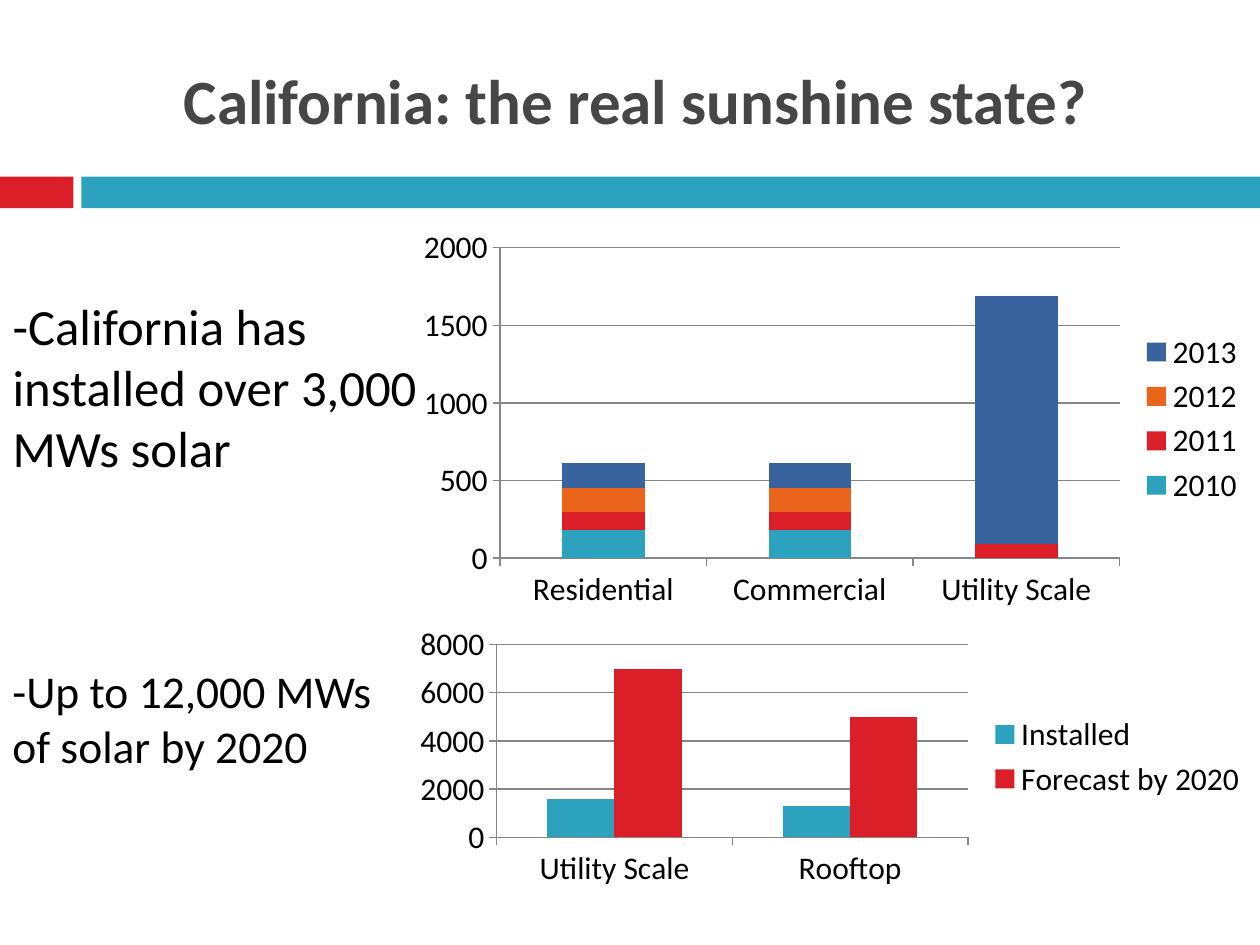
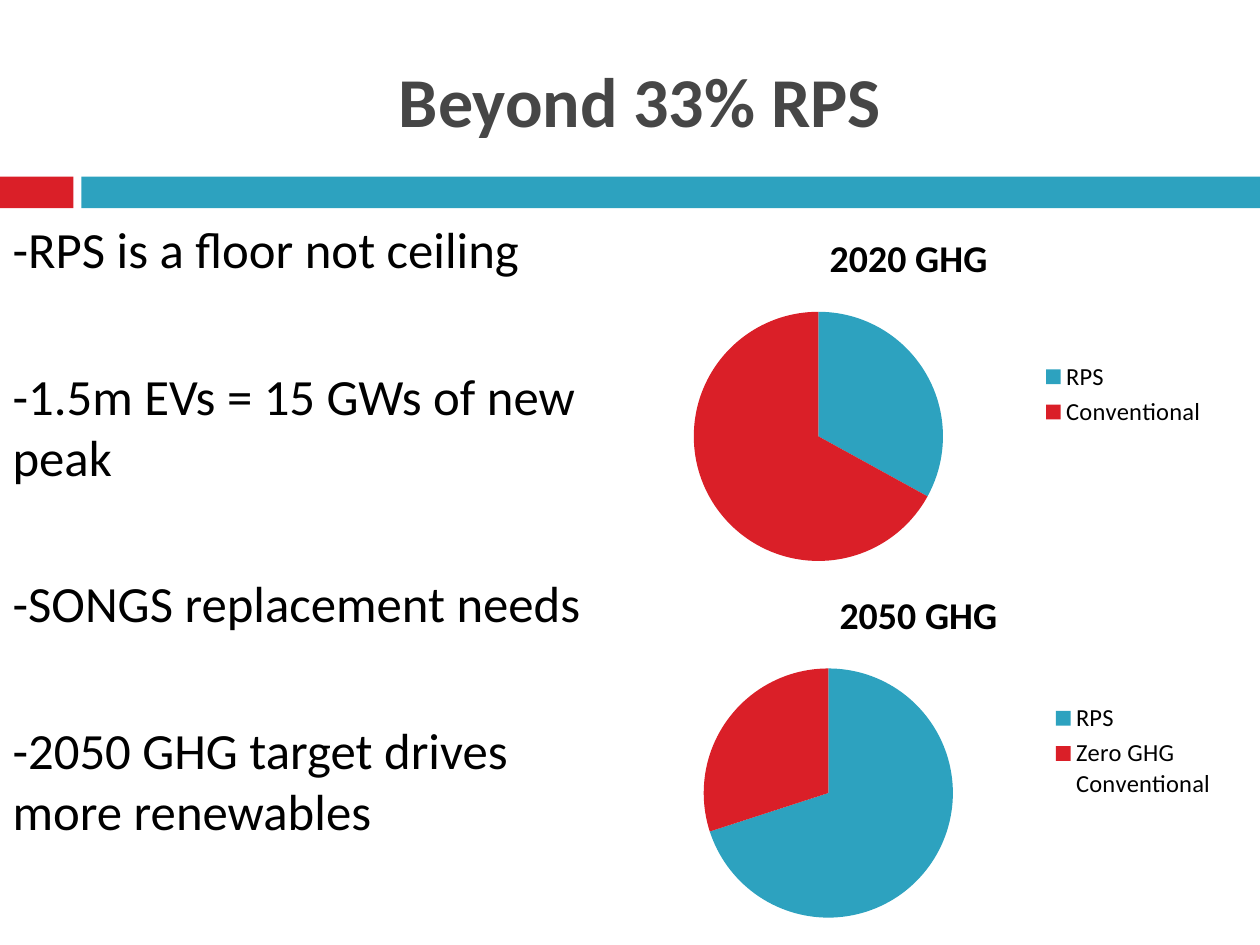
from lxml import etree
from pptx import Presentation
from pptx.chart.data import CategoryChartData
from pptx.dml.color import RGBColor
from pptx.enum.chart import XL_CHART_TYPE, XL_LEGEND_POSITION, XL_TICK_MARK
from pptx.enum.shapes import MSO_SHAPE
from pptx.enum.text import MSO_ANCHOR, MSO_AUTO_SIZE, PP_ALIGN
from pptx.oxml.ns import qn
from pptx.util import Cm, Pt

STACKED = XL_CHART_TYPE.COLUMN_STACKED
CLUSTERED = XL_CHART_TYPE.COLUMN_CLUSTERED
PIE = XL_CHART_TYPE.PIE
LEGEND_RIGHT = XL_LEGEND_POSITION.RIGHT
TICK_OUTSIDE = XL_TICK_MARK.OUTSIDE
RECTANGLE = MSO_SHAPE.RECTANGLE
NO_AUTOFIT = MSO_AUTO_SIZE.NONE
TOP, MIDDLE = MSO_ANCHOR.TOP, MSO_ANCHOR.MIDDLE
CENTER, LEFT = PP_ALIGN.CENTER, PP_ALIGN.LEFT

FONT = "Calibri"
TEAL, RED, ORANGE, NAVY = "2DA2BF", "DA1F28", "EB641B", "39639D"
SERIES_COLORS = [TEAL, RED, ORANGE, NAVY]
TITLE_GRAY, AXIS_GRAY, BLACK = "464646", "878787", "000000"

SLIDE_WIDTH, SLIDE_HEIGHT = 25.4, 19.05
BAND_TOP, BAND_HEIGHT = 3.56, 0.64
RED_BAND_WIDTH, TEAL_BAND_LEFT = 1.48, 1.64
TITLE_TOP, TITLE_WIDTH, TITLE_HEIGHT = 0.64, 22.66, 2.74
BODY_TOP = 4.24


def rgb(hex_color):
    return RGBColor.from_string(hex_color)


def set_font(font, size, color=BLACK, bold=False):
    for name, value in {"name": FONT, "size": Pt(size), "bold": bold}.items():
        setattr(font, name, value)
    font.color.rgb = rgb(color)


def place(shape, box):
    for name, length in zip(("left", "top", "width", "height"), box):
        setattr(shape, name, Cm(length))


def format_frame(frame, anchor, margin_top=0.13):
    settings = {"word_wrap": True, "auto_size": NO_AUTOFIT,
                "vertical_anchor": anchor, "margin_top": Cm(margin_top)}
    for name, value in settings.items():
        setattr(frame, name, value)


def add_bands(layout, slide):
    """Draw the two bands on the slide, then move them behind the layout's parts."""
    bands = [(0, RED_BAND_WIDTH, RED),
             (TEAL_BAND_LEFT, SLIDE_WIDTH - TEAL_BAND_LEFT, TEAL)]
    for left, width, color in bands:
        band = slide.shapes.add_shape(
            RECTANGLE, Cm(left), Cm(BAND_TOP), Cm(width), Cm(BAND_HEIGHT))
        band.fill.solid()
        band.fill.fore_color.rgb = rgb(color)
        band.line.fill.background()
        band.shadow.inherit = False
        layout.shapes.element.insert(2, band.element)


def fill_title(slide, text, left, size):
    title = slide.shapes.title
    place(title, (left, TITLE_TOP, TITLE_WIDTH, TITLE_HEIGHT))
    format_frame(title.text_frame, MIDDLE)
    title.text_frame.text = text
    paragraph = title.text_frame.paragraphs[0]
    paragraph.alignment = CENTER
    set_font(paragraph.runs[0].font, size, TITLE_GRAY, bold=True)


def fill_points(shape, points, box, size, margin_top, gap=0):
    """Write unbulleted points, with a gap in points between them."""
    place(shape, box)
    frame = shape.text_frame
    format_frame(frame, TOP, margin_top)
    frame.text = "\n".join(points)
    for index, paragraph in enumerate(frame.paragraphs):
        paragraph.alignment = LEFT
        paragraph.space_before = Pt(gap if index else 0)
        set_font(paragraph.runs[0].font, size)
        properties = paragraph._p.get_or_add_pPr()
        properties.set("marL", "0")
        properties.set("indent", "0")
        etree.SubElement(properties, qn("a:buNone"))


def add_chart(slide, kind, box, categories, series, legend_size=18):
    data = CategoryChartData()
    data.categories = categories
    for name, values in series.items():
        data.add_series(name, values)
    chart = slide.shapes.add_chart(kind, *map(Cm, box), data).chart
    set_font(chart.font, 18)
    chart.has_legend = True
    chart.legend.position = LEGEND_RIGHT
    chart.legend.include_in_layout = False
    set_font(chart.legend.font, legend_size)
    return chart


def color_fill(part, color):
    part.format.fill.solid()
    part.format.fill.fore_color.rgb = rgb(color)


def add_columns(slide, kind, box, categories, series, maximum, step):
    chart = add_chart(slide, kind, box, categories, series)
    chart.has_title = False
    plot = chart.plots[0]
    plot.vary_by_categories = False
    plot.gap_width = 150
    plot.overlap = 100 if kind == STACKED else 0
    for columns, color in zip(plot.series, SERIES_COLORS):
        color_fill(columns, color)
        columns.invert_if_negative = False
    amounts = chart.value_axis
    amounts.minimum_scale, amounts.maximum_scale = 0, maximum
    amounts.major_unit = step
    amounts.has_major_gridlines = True
    amounts.major_gridlines.format.line.color.rgb = rgb(AXIS_GRAY)
    for axis in (amounts, chart.category_axis):
        axis.major_tick_mark = TICK_OUTSIDE
        axis.format.line.color.rgb = rgb(AXIS_GRAY)


def add_pie(slide, box, heading, shares):
    chart = add_chart(slide, PIE, box, list(shares),
                      {heading: list(shares.values())}, legend_size=14)
    chart.has_title = True
    chart.chart_title.text_frame.text = heading
    heading_run = chart.chart_title.text_frame.paragraphs[0].runs[0]
    set_font(heading_run.font, 21.6, bold=True)
    plot = chart.plots[0]
    plot.vary_by_categories = True
    for index, color in enumerate(SERIES_COLORS[:len(shares)]):
        color_fill(plot.series[0].points[index], color)


def build_sunshine_slide(slide):
    fill_title(slide, "California: the real sunshine state?", 1.48, 36)
    fill_points(slide.placeholders[1],
                ["-California has installed over 3,000 MWs solar"],
                (0, BODY_TOP, 9.1, 6.15), 29, margin_top=1.7)
    add_columns(slide, STACKED, (8.2, 4.45, 17.15, 7.98),
                ["Residential", "Commercial", "Utility Scale"],
                {"2010": (180, 180, 0), "2011": (120, 120, 90),
                 "2012": (150, 150, 0), "2013": (160, 160, 1600)},
                maximum=2000, step=500)
    forecast_box = (0, 12.07, 8.05, 5.82)
    forecast = slide.shapes.add_textbox(*map(Cm, forecast_box))
    fill_points(forecast, ["-Up to 12,000 MWs of solar by 2020"],
                forecast_box, 26, margin_top=1.3)
    add_columns(slide, CLUSTERED, (8.13, 12.5, 17.27, 5.51),
                ["Utility Scale", "Rooftop"],
                {"Installed": (1600, 1300), "Forecast by 2020": (7000, 5000)},
                maximum=8000, step=2000)


def build_beyond_slide(slide):
    fill_title(slide, "Beyond 33% RPS", 1.57, 40)
    fill_points(slide.placeholders[1],
                ["-RPS is a floor not ceiling",
                 "-1.5m EVs = 15 GWs of new peak",
                 "-SONGS replacement needs",
                 "-2050 GHG target drives more renewables"],
                (0, BODY_TOP, 12.75, SLIDE_HEIGHT - BODY_TOP), 29,
                margin_top=0.15, gap=49)
    add_pie(slide, (12.07, 4.24, 12.5, 7.42), "2020 GHG",
            {"RPS": 33, "Conventional": 67})
    add_pie(slide, (12.27, 11.43, 12.5, 7.42), "2050 GHG",
            {"RPS": 70, "Zero GHG Conventional": 30})


def main():
    deck = Presentation()
    deck.slide_width, deck.slide_height = Cm(SLIDE_WIDTH), Cm(SLIDE_HEIGHT)
    layout = deck.slide_layouts[1]
    sunshine = deck.slides.add_slide(layout)
    add_bands(layout, sunshine)
    build_sunshine_slide(sunshine)
    build_beyond_slide(deck.slides.add_slide(layout))
    deck.save("out.pptx")


if __name__ == "__main__":
    main()
